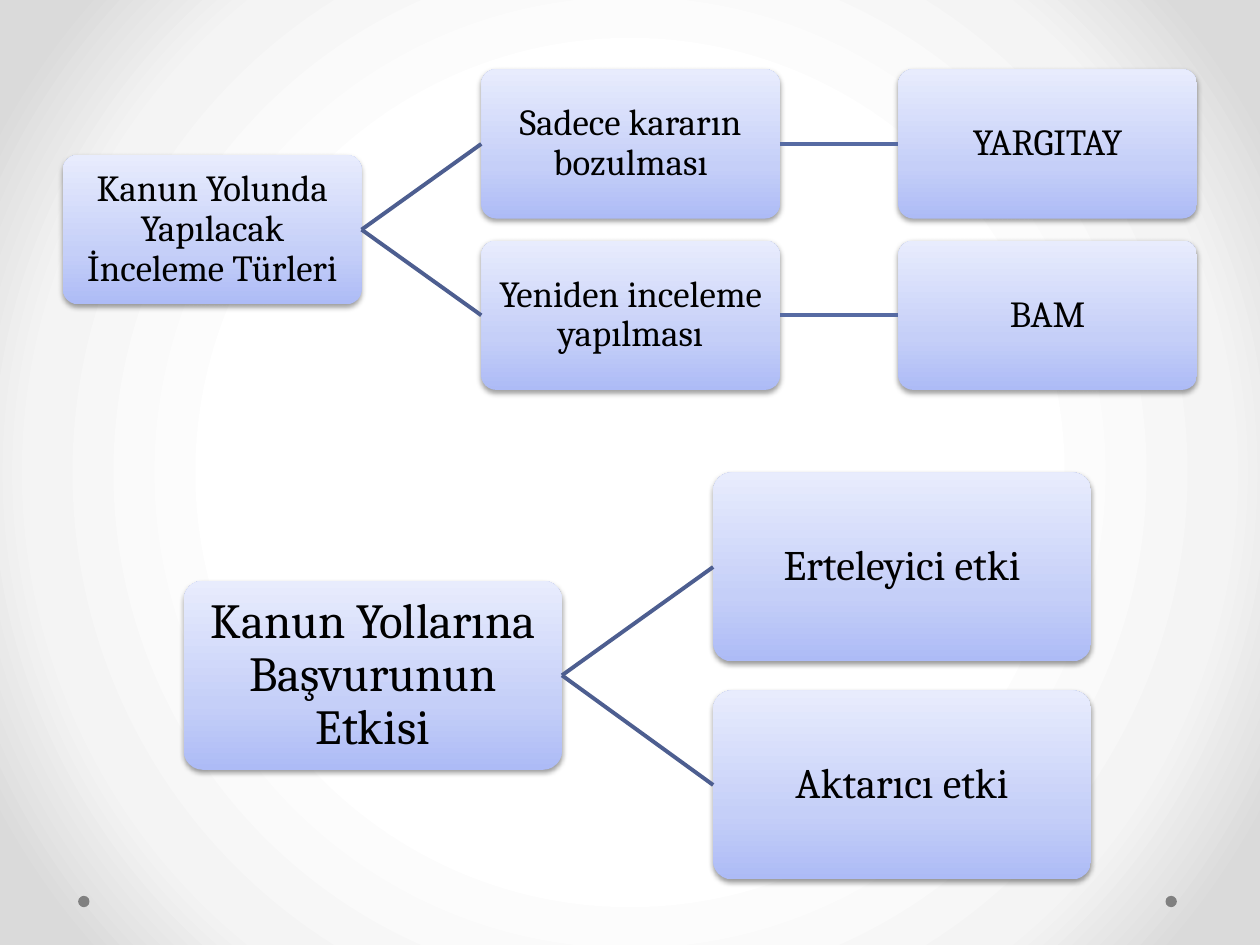
from lxml.etree import SubElement
from pptx import Presentation
from pptx.dml.color import RGBColor
from pptx.enum.shapes import MSO_CONNECTOR as CONN, MSO_SHAPE as SHAPE
from pptx.enum.text import MSO_ANCHOR as ANCHOR, PP_ALIGN as ALIGN
from pptx.oxml.ns import qn
from pptx.util import Inches, Pt

FONT = "Cambria"
BLACK = RGBColor(0x00, 0x00, 0x00)
DOT_GREY = RGBColor(0x80, 0x80, 0x80)
BRANCH_BLUE = RGBColor(0x4D, 0x5E, 0x90)
LINK_BLUE = RGBColor(0x57, 0x6B, 0xA3)
BOX_STOPS = [
    (0, RGBColor(0xAD, 0xBB, 0xF6)),
    (35, RGBColor(0xC5, 0xCF, 0xF8)),
    (100, RGBColor(0xE8, 0xEC, 0xFD)),
]
BACK_STOPS = [
    (50, RGBColor(0xFF, 0xFF, 0xFF)),
    (76, RGBColor(0xF4, 0xF4, 0xF4)),
    (92, RGBColor(0xDA, 0xDA, 0xDA)),
]


def add_node(parent, tag, **attrs):
    """Append a DrawingML element with the given attributes."""
    return SubElement(parent, qn(tag), {k: str(v) for k, v in attrs.items()})


def set_stops(grad, stops):
    """Empty a gradient fill and give it new colour stops."""
    for child in list(grad):
        grad.remove(child)
    stop_list = add_node(grad, "a:gsLst")
    for pos, color in stops:
        stop = add_node(stop_list, "a:gs", pos=pos * 1000)
        add_node(stop, "a:srgbClr", val=color)


def paint_background(slide):
    """Fill the slide with a circular gradient, light in the middle."""
    slide.background.fill.gradient()
    grad = slide._element.find(".//" + qn("p:bgPr")).find(qn("a:gradFill"))
    set_stops(grad, BACK_STOPS)
    circle = add_node(grad, "a:path", path="circle")
    add_node(circle, "a:fillToRect", l=50000, t=50000, r=50000, b=50000)


def add_dot(slide, x):
    """Draw one small footer dot."""
    s = slide.shapes.add_shape(SHAPE.OVAL, Inches(x), Inches(7.11), Inches(0.09), Inches(0.09))
    s.shadow.inherit = False
    s.fill.solid()
    s.fill.fore_color.rgb = DOT_GREY
    s.line.fill.background()


def add_shadow(s):
    """Give a shape a soft shadow just below it."""
    s.shadow.inherit = False
    effects = s._element.spPr.find(qn("a:effectLst"))
    shadow = add_node(effects, "a:outerShdw", blurRad=Pt(3.1), dist=Pt(1.6),
                      dir=5400000, rotWithShape=0)
    color = add_node(shadow, "a:srgbClr", val=BLACK)
    add_node(color, "a:alpha", val=38000)


def add_box(slide, text, x, y, width, size, inset):
    """Draw a rounded box, half as high as wide, with centred text."""
    s = slide.shapes.add_shape(SHAPE.ROUNDED_RECTANGLE, Inches(x), Inches(y),
                               Inches(width), Inches(width / 2))
    s.adjustments[0] = 0.1
    s.fill.gradient()
    grad = s._element.spPr.find(qn("a:gradFill"))
    set_stops(grad, BOX_STOPS)
    add_node(grad, "a:lin", ang=16200000, scaled=0)
    s.line.fill.background()
    add_shadow(s)
    tf = s.text_frame
    tf.word_wrap = True
    tf.vertical_anchor = ANCHOR.MIDDLE
    tf.margin_left = tf.margin_right = tf.margin_top = tf.margin_bottom = Inches(inset)
    tf.text = text
    p = tf.paragraphs[0]
    p.alignment = ALIGN.CENTER
    p.line_spacing = 0.9
    p.font.name = FONT
    p.font.size = Pt(size)
    p.font.color.rgb = BLACK
    return s


def connect(slide, parent, child, color):
    """Join the right side of one box to the left side of another."""
    line = slide.shapes.add_connector(CONN.STRAIGHT, 0, 0, 0, 0)
    line.begin_connect(parent, 3)
    line.end_connect(child, 1)
    line.line.color.rgb = color
    line.line.width = Pt(2.25)
    add_node(line._element.spPr, "a:effectLst")


def add_review_tree(slide):
    """Draw the review types with the court that belongs to each."""
    width, size, inset = 2.37, 21, 0.01
    root = add_box(slide, "Kanun Yolunda Yapılacak İnceleme Türleri", 0.5, 1.23, width, size, inset)
    rows = [("Sadece kararın bozulması", "YARGITAY"), ("Yeniden inceleme yapılması", "BAM")]
    for i, (kind, court) in enumerate(rows):
        y = 0.55 + i * 1.36
        kind_box = add_box(slide, kind, 3.82, y, width, size, inset)
        court_box = add_box(slide, court, 7.13, y, width, size, inset)
        connect(slide, root, kind_box, BRANCH_BLUE)
        connect(slide, kind_box, court_box, LINK_BLUE)


def add_effect_tree(slide):
    """Draw the effects of an application."""
    width, inset = 3, 0.02
    root = add_box(slide, "Kanun Yollarına Başvurunun Etkisi", 1.46, 4.61, width, 28, inset)
    for i, effect in enumerate(["Erteleyici etki", "Aktarıcı etki"]):
        box = add_box(slide, effect, 5.66, 3.75 + i * 1.73, width, 24, inset)
        connect(slide, root, box, BRANCH_BLUE)


def main():
    """Build the slide and save it."""
    prs = Presentation()
    prs.slide_width, prs.slide_height = Inches(10), Inches(7.5)
    slide = prs.slides.add_slide(prs.slide_layouts[6])
    paint_background(slide)
    for x in (9.25, 0.62):
        add_dot(slide, x)
    add_review_tree(slide)
    add_effect_tree(slide)
    prs.save("out.pptx")


if __name__ == "__main__":
    main()
